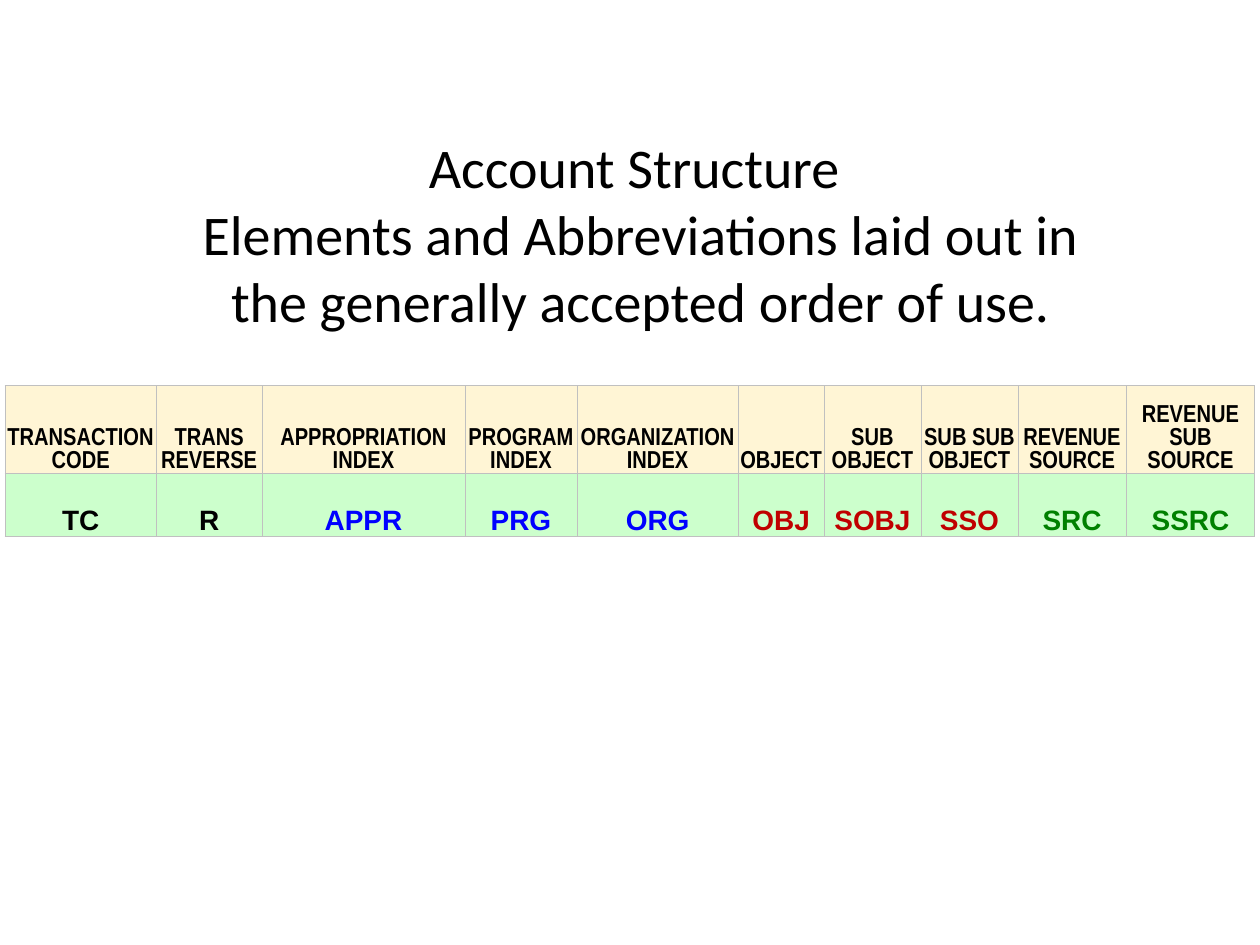
from dataclasses import dataclass

import pptx
import pptx.dml.color
import pptx.enum.text
import pptx.oxml
import pptx.oxml.ns
import pptx.table
import pptx.text.text
import pptx.util
from pptx.dml.color import RGBColor

BLACK = RGBColor(0x00, 0x00, 0x00)
BLUE = RGBColor(0x00, 0x00, 0xFF)
RED = RGBColor(0xC0, 0x00, 0x00)
GREEN = RGBColor(0x00, 0x80, 0x00)
CREAM = RGBColor(0xFF, 0xF5, 0xD5)
MINT = RGBColor(0xCC, 0xFF, 0xCC)
BORDER_GREY = RGBColor(0xC0, 0xC0, 0xC0)

SLIDE_WIDTH = pptx.util.Inches(10)
SLIDE_HEIGHT = pptx.util.Inches(7.5)
TABLE_LEFT, TABLE_TOP = pptx.util.Inches(0.04), pptx.util.Inches(3.06)
ROW_HEIGHTS = (pptx.util.Inches(0.7), pptx.util.Inches(0.5))
TITLE_LINES = (
    "Account Structure ",
    "Elements and Abbreviations laid out in the generally accepted order of use.",
)


@dataclass(frozen=True)
class Element:
    name: str
    abbreviation: str
    color: RGBColor
    width: float  # inches


@dataclass(frozen=True)
class CellStyle:
    font_name: str
    font_size: int
    fill: RGBColor


ELEMENTS = (
    Element("TRANSACTION CODE", "TC", BLACK, 1.2),
    Element("TRANS REVERSE", "R", BLACK, 0.84),
    Element("APPROPRIATION INDEX", "APPR", BLUE, 1.61),
    Element("PROGRAM INDEX", "PRG", BLUE, 0.89),
    Element("ORGANIZATION INDEX", "ORG", BLUE, 1.28),
    Element("OBJECT", "OBJ", RED, 0.68),
    Element("SUB OBJECT", "SOBJ", RED, 0.77),
    Element("SUB SUB OBJECT", "SSO", RED, 0.77),
    Element("REVENUE SOURCE", "SRC", GREEN, 0.86),
    Element("REVENUE SUB SOURCE", "SSRC", GREEN, 1.02),
)
NAME_STYLE = CellStyle("Arial Narrow", 14, CREAM)
ABBREVIATION_STYLE = CellStyle("Arial", 16, MINT)


def format_paragraph(
    paragraph: pptx.text.text._Paragraph, font_name: str, size: int, color: RGBColor
) -> None:
    paragraph.alignment = pptx.enum.text.PP_ALIGN.CENTER
    paragraph.font.name = font_name
    paragraph.font.size = pptx.util.Pt(size)
    paragraph.font.color.rgb = color


def add_borders(cell: pptx.table._Cell) -> None:
    """Draw a thin grey line on all four sides; lines must precede the fill."""
    properties = cell._tc.get_or_add_tcPr()
    for index, side in enumerate(("lnL", "lnR", "lnT", "lnB")):
        line = pptx.oxml.parse_xml(
            f'<a:{side} {pptx.oxml.ns.nsdecls("a")} w="{pptx.util.Pt(0.5)}">'
            f'<a:solidFill><a:srgbClr val="{BORDER_GREY}"/></a:solidFill></a:{side}>'
        )
        properties.insert(index, line)


def fill_cell(
    cell: pptx.table._Cell, text: str, style: CellStyle, color: RGBColor
) -> None:
    cell.text = text
    cell.vertical_anchor = pptx.enum.text.MSO_ANCHOR.BOTTOM
    cell.margin_left = cell.margin_right = cell.margin_top = pptx.util.Inches(0.01)
    cell.margin_bottom = 0
    cell.fill.solid()
    cell.fill.fore_color.rgb = style.fill
    paragraph = cell.text_frame.paragraphs[0]
    format_paragraph(paragraph, style.font_name, style.font_size, color)
    paragraph.font.bold = True
    add_borders(cell)


def add_element_table(slide: pptx.slide.Slide) -> None:
    widths = [pptx.util.Inches(element.width) for element in ELEMENTS]
    table = slide.shapes.add_table(
        len(ROW_HEIGHTS), len(ELEMENTS), TABLE_LEFT, TABLE_TOP,
        sum(widths), sum(ROW_HEIGHTS),
    ).table
    for row, height in zip(table.rows, ROW_HEIGHTS):
        row.height = height
    for index, (element, width) in enumerate(zip(ELEMENTS, widths)):
        table.columns[index].width = width
        fill_cell(table.cell(0, index), element.name, NAME_STYLE, BLACK)
        fill_cell(
            table.cell(1, index), element.abbreviation, ABBREVIATION_STYLE, element.color
        )


def add_title(slide: pptx.slide.Slide) -> None:
    text_box = slide.shapes.add_textbox(
        pptx.util.Inches(1.42), pptx.util.Inches(1),
        pptx.util.Inches(7.33), pptx.util.Inches(1.72),
    )
    text_frame = text_box.text_frame
    text_frame.word_wrap = True
    text_frame.auto_size = pptx.enum.text.MSO_AUTO_SIZE.SHAPE_TO_FIT_TEXT
    text_frame.text = "\n".join(TITLE_LINES)
    for paragraph in text_frame.paragraphs:
        format_paragraph(paragraph, "Calibri", 32, BLACK)


def main() -> None:
    presentation = pptx.Presentation()
    presentation.slide_width = SLIDE_WIDTH
    presentation.slide_height = SLIDE_HEIGHT
    slide = presentation.slides.add_slide(presentation.slide_layouts[6])
    add_element_table(slide)
    add_title(slide)
    presentation.save("out.pptx")


if __name__ == "__main__":
    main()
